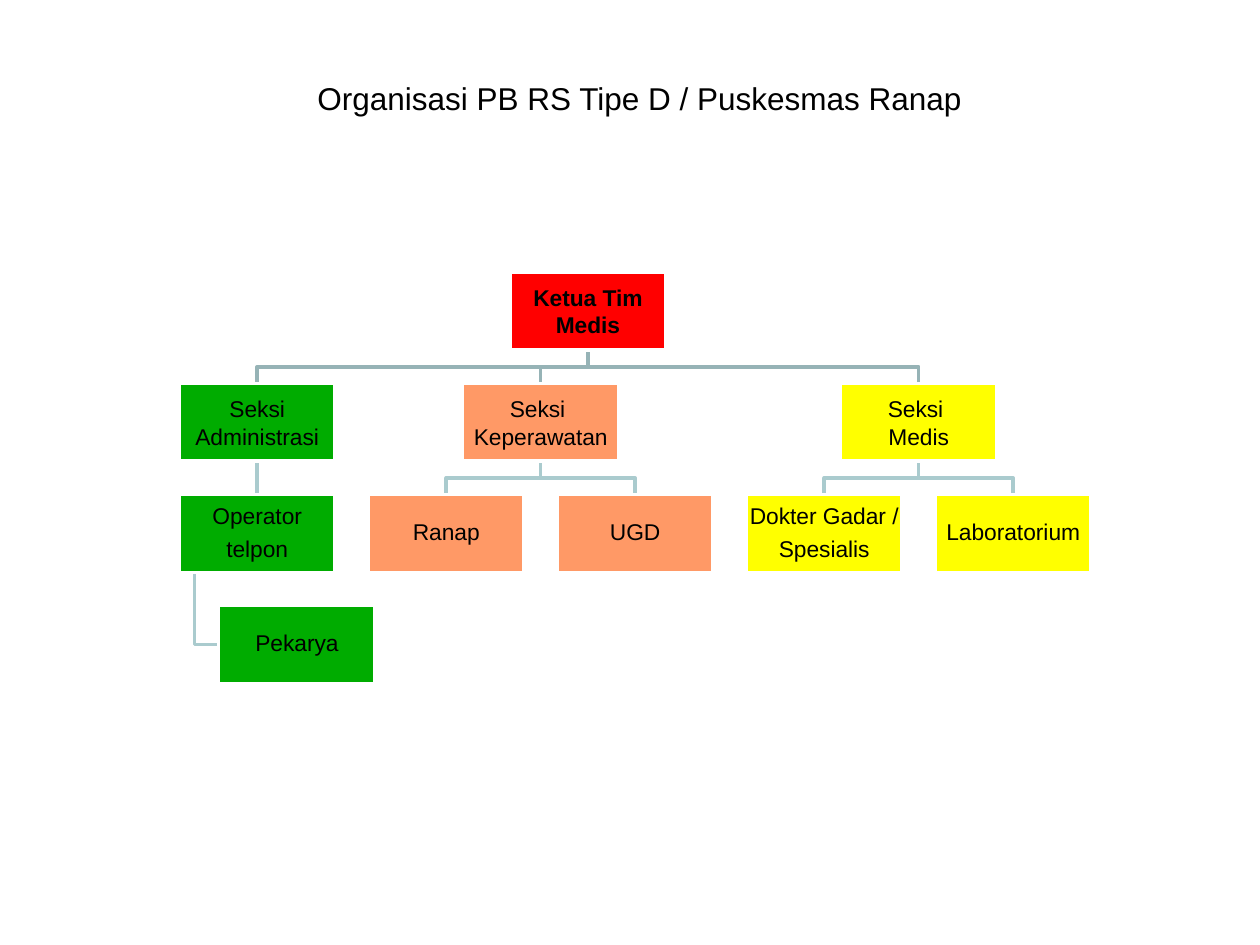
import lxml.etree
import pptx
import pptx.dml.color
import pptx.enum.shapes
import pptx.enum.text
import pptx.oxml.ns
import pptx.util

Cm, Pt = pptx.util.Cm, pptx.util.Pt

TITLE = "Organisasi PB RS Tipe D / Puskesmas Ranap"

# name: (paragraphs, colour, column, row)
UNITS = {
    "ketua": (["Ketua Tim", "Medis"], "red", 1.75, 0),
    "administrasi": (["Seksi Administrasi"], "green", 0, 1),
    "keperawatan": (["Seksi ", "Keperawatan"], "orange", 1.5, 1),
    "medis": (["Seksi ", "Medis"], "yellow", 3.5, 1),
    "operator": (["Operator", "telpon"], "green", 0, 2),
    "ranap": (["Ranap"], "orange", 1, 2),
    "ugd": (["UGD"], "orange", 2, 2),
    "dokter": (["Dokter Gadar /", "Spesialis"], "yellow", 3, 2),
    "laboratorium": (["Laboratorium"], "yellow", 4, 2),
    "pekarya": (["Pekarya"], "green", 0.21, 3),
}
REPORTS = {
    "ketua": ["administrasi", "keperawatan", "medis"],
    "administrasi": ["operator"],
    "keperawatan": ["ranap", "ugd"],
    "medis": ["dokter", "laboratorium"],
    "operator": ["pekarya"],
}

THEME = {
    "font": "Arial", "title_size": Pt(18), "box_size": Pt(13), "line": Pt(2),
    "text": "000000", "border": "FFFFFF",
    "red": "FF0000", "green": "00AC00", "orange": "FF9966", "yellow": "FFFF00",
    "upper_link": "96B3B6", "lower_link": "AACBCE",
}

CHART_LEFT, CHART_TOP = Cm(3.61), Cm(5.49)
BOX_WIDTH, BOX_HEIGHT = Cm(3.15), Cm(1.57)
COLUMN_PITCH, ROW_PITCH = Cm(3.81), Cm(2.24)
SIDE_LINK_INDENT = Cm(0.31)
BOX_INSET = Cm(0.03)


def colour(name):
    return pptx.dml.color.RGBColor.from_string(THEME[name])


def add_run(paragraph, text, size, bold=False):
    run = paragraph.add_run()
    run.text = text
    run.font.name = THEME["font"]
    run.font.size = size
    run.font.bold = bold
    run.font.color.rgb = colour("text")


def style_line(shape, colour_name):
    shape.line.color.rgb = colour(colour_name)
    shape.line.width = THEME["line"]


def add_title(slide):
    box = slide.shapes.add_textbox(Cm(6.15), Cm(1.47), Cm(13.61), Cm(1.02))
    box.text_frame.word_wrap = False
    box.text_frame.auto_size = pptx.enum.text.MSO_AUTO_SIZE.SHAPE_TO_FIT_TEXT
    add_run(box.text_frame.paragraphs[0], TITLE, THEME["title_size"])


def add_unit(slide, texts, fill, column, row):
    shape = slide.shapes.add_shape(
        pptx.enum.shapes.MSO_SHAPE.RECTANGLE,
        int(CHART_LEFT + column * COLUMN_PITCH), CHART_TOP + row * ROW_PITCH,
        BOX_WIDTH, BOX_HEIGHT)
    shape.shadow.inherit = False
    shape.fill.solid()
    shape.fill.fore_color.rgb = colour(fill)
    style_line(shape, "border")

    frame = shape.text_frame
    frame.word_wrap = True
    frame.vertical_anchor = pptx.enum.text.MSO_ANCHOR.MIDDLE
    frame.margin_left = frame.margin_right = BOX_INSET
    frame.margin_top = frame.margin_bottom = BOX_INSET
    for index, text in enumerate(texts):
        paragraph = frame.add_paragraph() if index else frame.paragraphs[0]
        paragraph.alignment = pptx.enum.text.PP_ALIGN.CENTER
        if row >= 2:
            paragraph.line_spacing = 0.9
            paragraph.space_after = Pt(4.55)
        add_run(paragraph, text, THEME["box_size"], bold=row == 0)
    return shape


def add_straight_link(slide, parent, child):
    link = slide.shapes.add_connector(
        pptx.enum.shapes.MSO_CONNECTOR.STRAIGHT, 0, 0, 0, 0)
    link.begin_connect(parent, 2)
    link.end_connect(child, 0)
    lxml.etree.SubElement(
        link.element.spPr, pptx.oxml.ns.qn("a:effectLst"))
    return link


def add_bent_link(slide, points):
    builder = slide.shapes.build_freeform(*points[0])
    builder.add_line_segments(points[1:], close=False)
    link = builder.convert_to_shape()
    link.fill.background()
    link.shadow.inherit = False
    return link


def add_link(slide, parent, child, parent_row, child_row):
    """Join two units, behind the boxes so their borders trim the line ends."""
    bottom = parent.top + BOX_HEIGHT
    start = parent.left + BOX_WIDTH // 2
    end = child.left + BOX_WIDTH // 2
    if start == end:
        link = add_straight_link(slide, parent, child)
    elif child_row == 3:
        side = parent.left + SIDE_LINK_INDENT
        middle = child.top + BOX_HEIGHT // 2
        link = add_bent_link(
            slide, [(side, bottom), (side, middle), (child.left, middle)])
    else:
        bend = (bottom + child.top) // 2
        link = add_bent_link(
            slide, [(start, bottom), (start, bend), (end, bend), (end, child.top)])
    style_line(link, "lower_link" if parent_row else "upper_link")
    slide.shapes.element.insert(2, link.element)


def main():
    presentation = pptx.Presentation()
    presentation.slide_width, presentation.slide_height = Cm(25.4), Cm(19.05)
    slide = presentation.slides.add_slide(presentation.slide_layouts[6])
    boxes = {name: add_unit(slide, *unit) for name, unit in UNITS.items()}
    for parent, children in REPORTS.items():
        for child in children:
            add_link(slide, boxes[parent], boxes[child],
                     UNITS[parent][3], UNITS[child][3])
    add_title(slide)
    presentation.save("out.pptx")


if __name__ == "__main__":
    main()
